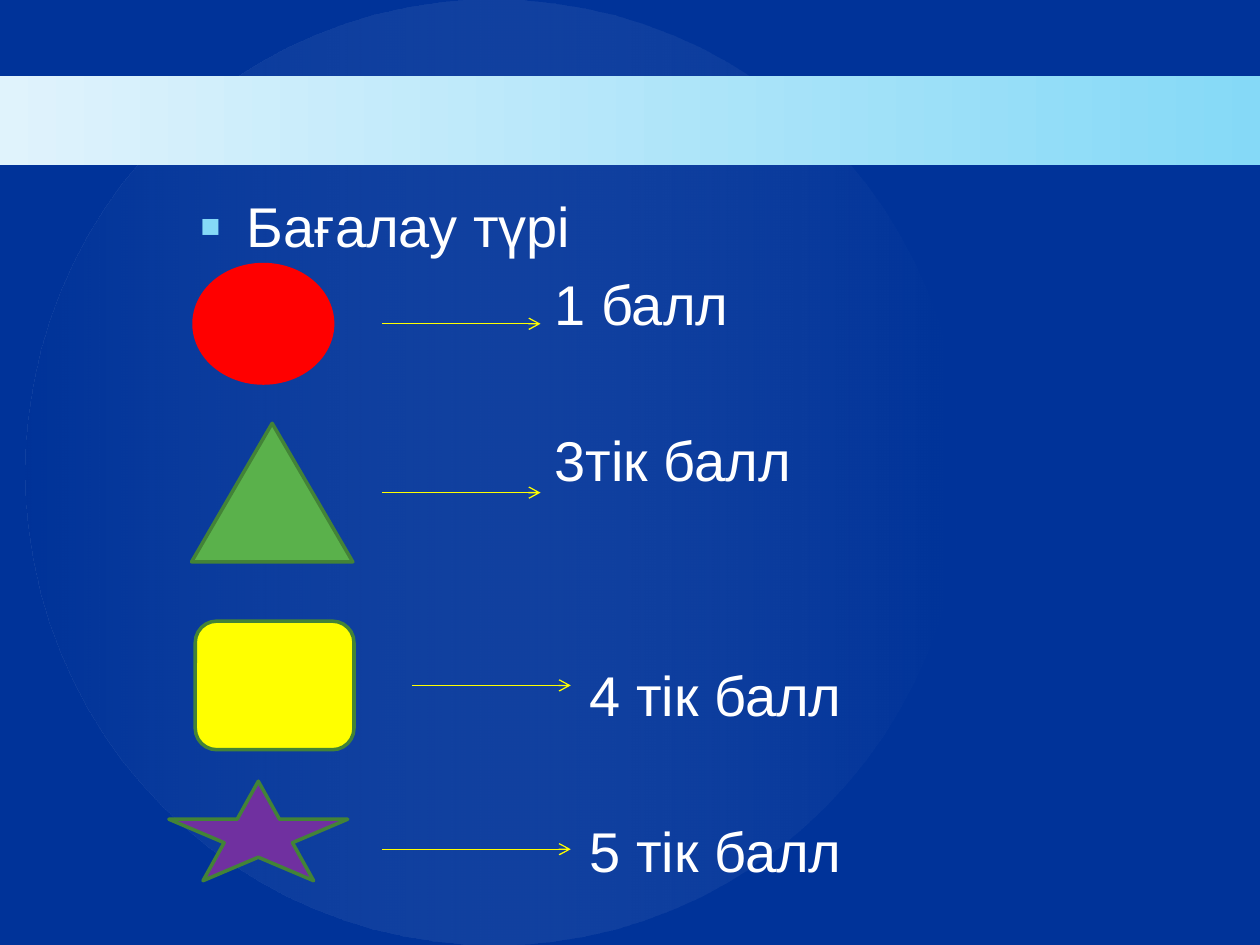
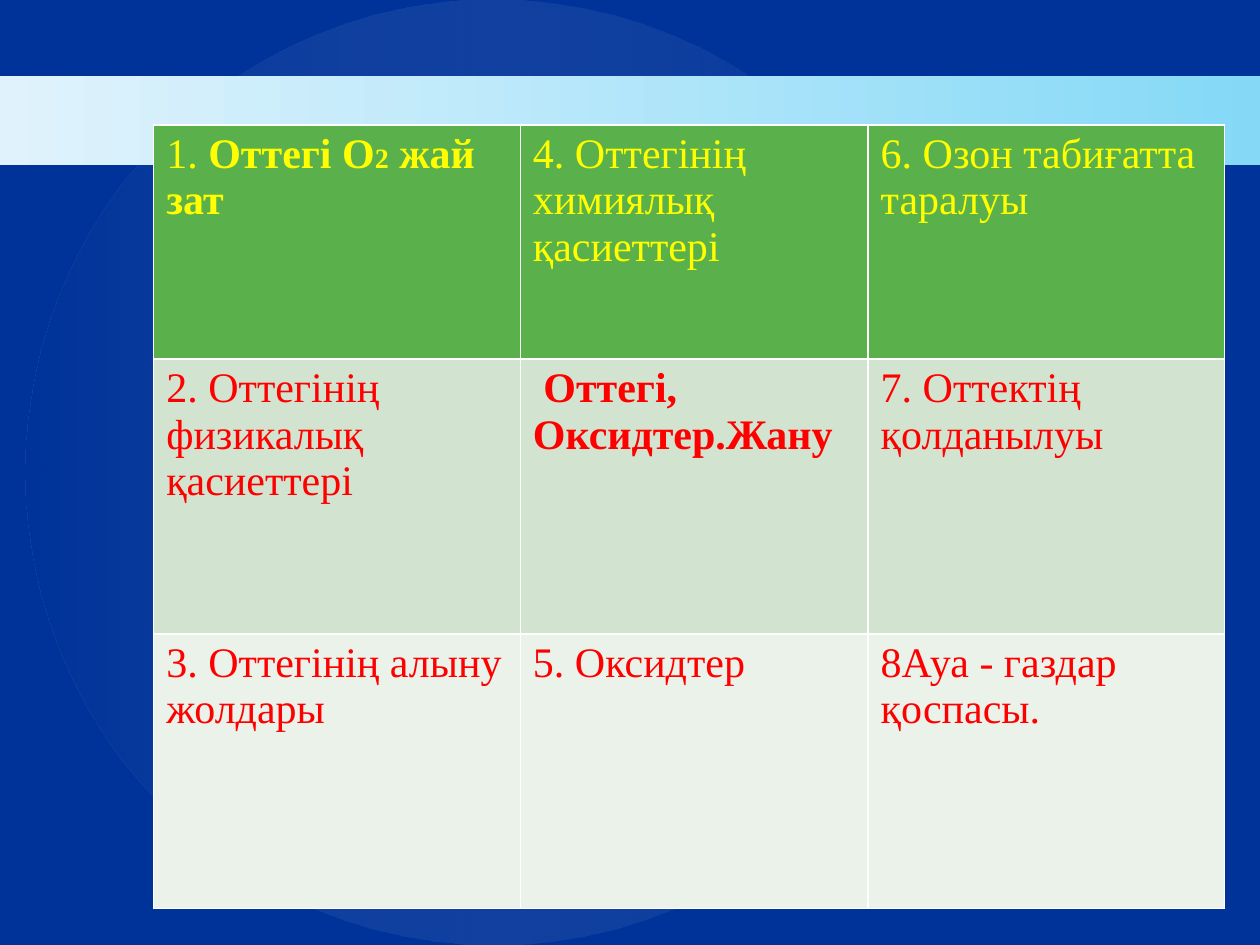
"""Build two slides on oxygen: a scoring key and a topic table."""
from lxml import etree
from pptx import Presentation
from pptx.dml.color import RGBColor as Rgb
from pptx.enum.shapes import MSO_CONNECTOR as Link, MSO_SHAPE as Form
from pptx.oxml.ns import qn
from pptx.util import Inches, Pt

HUES = {
    "back": "003399", "white": "FFFFFF", "pale": "E0F3FC", "sky": "85D9F7",
    "red": "FF0000", "yellow": "FFFF00", "green": "5AB14B", "edge": "438337",
    "purple": "7030A0", "mint": "D2E4D0", "mist": "EAF2E9",
}
COLS, ROWS = 100, 75
UNIT = Inches(10) // COLS
SANS, SERIF = "Arial", "Times New Roman"

SCORES = [
    (Form.OVAL, (0.4, 6.8, 11, 9.4), "red", "red", (15.3, 27.9, 11.5), (29, 1), "1 балл"),
    (Form.ISOSCELES_TRIANGLE, (0.2, 19.4, 12.8, 11), "green", "edge",
     (15.3, 27.9, 24.9), (29, 3), "3тік балл"),
    (Form.ROUNDED_RECTANGLE, (0.5, 35.1, 12.6, 10.2), "yellow", "edge",
     (17.7, 30.3, 40.2), (31.8, 6), "4 тік балл"),
    (Form.STAR_5_POINT, (-1.6, 47.8, 14.2, 7.9), "purple", "edge",
     (15.3, 30.3, 53.2), (31.8, 8), "5 тік балл"),
]
WIDTHS, HEIGHTS = (29.1, 27.6, 28.3), (18.6, 21.8, 21.8)
TOPICS = [
    [[("1. ", 24, False), ("Оттегі О", 24, True), ("2", 16, True), (" жай зат", 24, True)],
     [("4. Оттегінің химиялық қасиеттері", 24, False)],
     [("6. Озон табиғатта таралуы", 24, False)]],
    [[("2. Оттегінің физикалық қасиеттері", 24, False)],
     [(" Оттегі, Оксидтер.Жану", 24, True)],
     [("7. Оттектің қолданылуы", 24, False)]],
    [[("3. Оттегінің алыну жолдары", 24, False)],
     [("5. Оксидтер", 24, False)],
     [("8Ауа - газдар қоспасы.", 24, False)]],
]
TONES = [("green", "yellow"), ("mint", "red"), ("mist", "red")]


def hue(name):
    """Return a named colour."""
    return Rgb.from_string(HUES[name])


def span(*cells):
    """Turn grid cells into slide lengths."""
    return [round(cell * UNIT) for cell in cells]


def node(parent, tag, **attrs):
    """Append a drawing element."""
    return etree.SubElement(parent, qn(tag), **attrs)


def write(para, text, size, font, tone, bold=False):
    """Add one styled run."""
    run = para.add_run()
    run.text = text
    run.font.size, run.font.name, run.font.bold = Pt(size), font, bold
    run.font.color.rgb = hue(tone)


def form(slide, kind, box, fill=None, edge=None):
    """Add a flat preset shape."""
    shape = slide.shapes.add_shape(kind, *span(*box))
    shape.shadow.inherit = False
    if fill:
        shape.fill.solid()
        shape.fill.fore_color.rgb = hue(fill)
    if edge:
        shape.line.color.rgb = hue(edge)
        shape.line.width = Pt(2)
    else:
        shape.line.fill.background()
    return shape


def fade(shape, tones, alphas=()):
    """Fill a shape with a gradient from left to right."""
    shape.fill.gradient()
    shape.fill.gradient_angle = 0
    for stop, tone in zip(shape.fill.gradient_stops, tones):
        stop.color.rgb = hue(tone)
    marks = shape.fill._fill._gradFill.iter(qn("a:srgbClr"))
    for mark, alpha in zip(marks, alphas):
        node(mark, "a:alpha", val=str(alpha * 1000))


def base(deck):
    """Add a slide with the shared disc and band."""
    slide = deck.slides.add_slide(deck.slide_layouts[6])
    slide.background.fill.solid()
    slide.background.fill.fore_color.rgb = hue("back")
    fade(form(slide, Form.OVAL, (2, 0, 74.4, ROWS)), ("back", "white"), (27, 0))
    fade(form(slide, Form.RECTANGLE, (0, 6, COLS, 7.1)), ("pale", "sky"))
    return slide


def label(slide, left, top, text, dot=False):
    """Add one line of large text, with a square bullet if asked."""
    frame = slide.shapes.add_textbox(*span(left, top, 40, 5.2)).text_frame
    frame.word_wrap = True
    frame.margin_left = frame.margin_right = frame.margin_top = frame.margin_bottom = 0
    para = frame.paragraphs[0]
    if dot:
        props = para._p.get_or_add_pPr()
        indent = Inches(0.38)
        props.set("marL", str(indent))
        props.set("indent", str(-indent))
        node(node(props, "a:buClr"), "a:srgbClr", val=HUES["sky"])
        node(props, "a:buSzPct", val="115000")
        node(props, "a:buFont", typeface=SANS)
        node(props, "a:buChar", char="▪")
    write(para, text, 32, SANS, "white")


def arrow(slide, start, end, level):
    """Add a thin level arrow."""
    line = slide.shapes.add_connector(Link.STRAIGHT, *span(start, level, end, level))
    line.line.color.rgb = hue("yellow")
    line.line.width = Pt(0.75)
    node(line.line._get_or_add_ln(), "a:tailEnd", type="arrow")
    node(line._element.spPr, "a:effectLst")


def key(slide, box):
    """Place the scoring key in a box."""
    left, top = box[:2]
    first, pitch = top + 1, 6.2
    label(slide, left + 0.8, first, "Бағалау түрі", dot=True)
    for kind, (x, y, wide, high), fill, edge, (start, end, level), (col, row), text in SCORES:
        form(slide, kind, (left + x, top + y, wide, high), fill, edge)
        arrow(slide, left + start, left + end, top + level)
        label(slide, left + col, first + row * pitch, text)


def frame(cell):
    """Draw white borders round a cell."""
    props = cell._tc.get_or_add_tcPr()
    for side in "LRTB":
        line = node(props, f"a:ln{side}", w=str(Pt(1)))
        node(node(line, "a:solidFill"), "a:srgbClr", val=HUES["white"])


def chart(slide, box):
    """Place the topic table in a box."""
    table = slide.shapes.add_table(len(HEIGHTS), len(WIDTHS), *span(*box)).table
    for col, wide in zip(table.columns, span(*WIDTHS)):
        col.width = wide
    for row, high, topics, (fill, ink) in zip(table.rows, span(*HEIGHTS), TOPICS, TONES):
        row.height = high
        for cell, runs in zip(row.cells, topics):
            frame(cell)
            cell.fill.solid()
            cell.fill.fore_color.rgb = hue(fill)
            for text, size, bold in runs:
                write(cell.text_frame.paragraphs[0], text, size, SERIF, ink, bold)


def main():
    """Build and save the deck."""
    deck = Presentation()
    deck.slide_width, deck.slide_height = span(COLS, ROWS)
    key(base(deck), (15, 14.2, 80, 56.7))
    chart(base(deck), (12.2, 9.9, sum(WIDTHS), sum(HEIGHTS)))
    deck.save("out.pptx")


if __name__ == "__main__":
    main()
